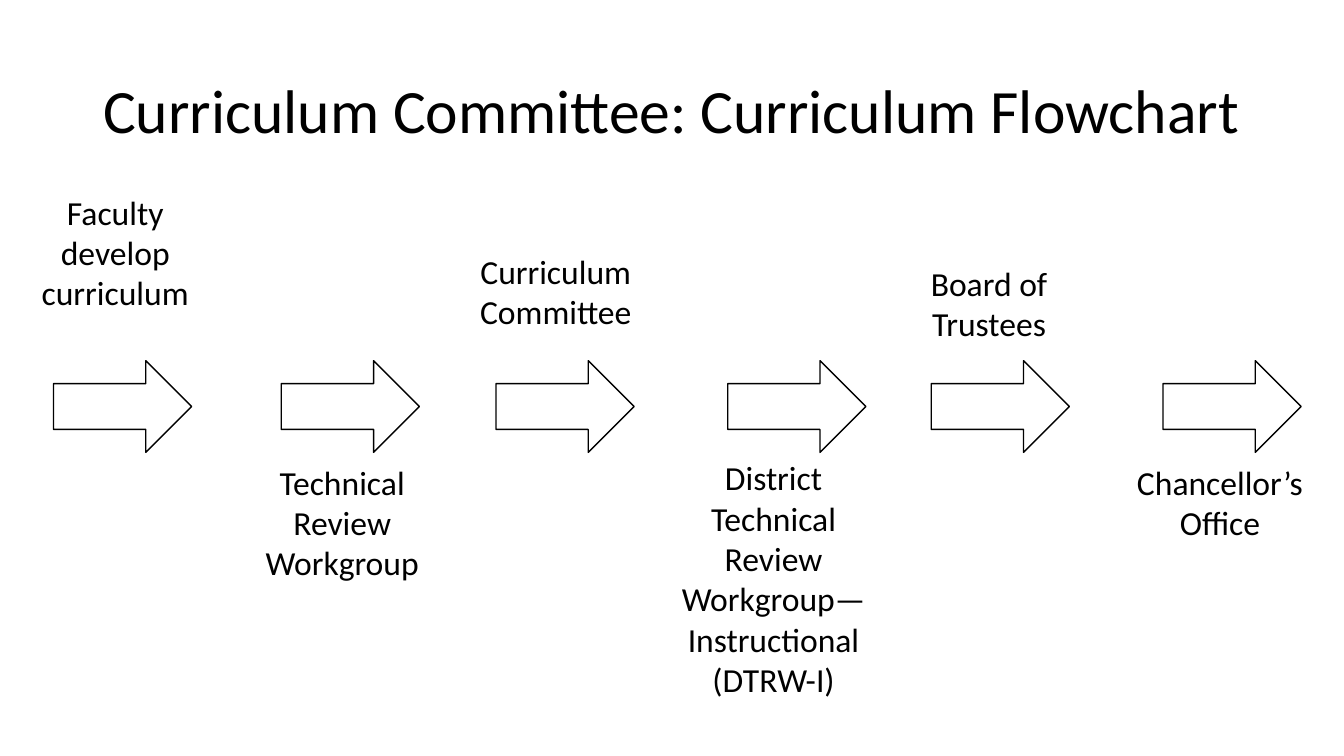
"""Build the curriculum approval flowchart slide."""
from dataclasses import dataclass

from pptx import Presentation
from pptx.dml.color import RGBColor
from pptx.enum.shapes import MSO_SHAPE as Shape
from pptx.enum.text import MSO_ANCHOR as Anchor, MSO_AUTO_SIZE as Fit, PP_ALIGN as Align
from pptx.slide import Slide
from pptx.text.text import TextFrame
from pptx.util import Cm, Pt

FONT = "Calibri"
BLACK = "000000"
WHITE = "FFFFFF"
ARROW_TOP, ARROW_WIDTH, ARROW_HEIGHT = 9.09, 3.48, 2.31
LABEL_WIDTH, LINE_HEIGHT, PADDING = 5.81, 1.02, 0.27


@dataclass(frozen=True)
class Step:
    label: str
    arrow: float
    left: float
    top: float
    lines: int


STEPS = [
    Step("Faculty develop curriculum", 1.35, 0, 4.7, 3),
    Step("Technical Review Workgroup", 7.09, 5.72, 11.51, 3),
    Step("Curriculum Committee", 12.5, 11.1, 6.2, 2),
    Step("District Technical Review Workgroup—Instructional (DTRW-I)", 18.34, 16.59, 11.4, 6),
    Step("Board of Trustees", 23.47, 22.02, 6.5, 2),
    Step("Chancellor’s Office", 29.31, 27.84, 11.51, 2),
]


def color(code: str) -> RGBColor:
    return RGBColor.from_string(code)


def write(frame: TextFrame, text: str, size: int, spacing: float = 1.0) -> None:
    frame.word_wrap = True
    frame.text = text
    line = frame.paragraphs[0]
    line.alignment = Align.CENTER
    line.line_spacing = spacing
    line.font.name = FONT
    line.font.size = Pt(size)
    line.font.color.rgb = color(BLACK)


def draw_title(slide: Slide) -> None:
    title = slide.shapes.title
    title.left, title.top, title.width, title.height = Cm(2.33), Cm(1.01), Cm(29.21), Cm(3.68)
    write(title.text_frame, "Curriculum Committee: Curriculum Flowchart", 44, 0.9)
    title.text_frame.auto_size = Fit.NONE
    title.text_frame.vertical_anchor = Anchor.MIDDLE


def draw_step(slide: Slide, step: Step) -> None:
    arrow = slide.shapes.add_shape(
        Shape.RIGHT_ARROW, Cm(step.arrow), Cm(ARROW_TOP), Cm(ARROW_WIDTH), Cm(ARROW_HEIGHT)
    )
    arrow.shadow.inherit = False
    arrow.fill.solid()
    arrow.fill.fore_color.rgb = color(WHITE)
    arrow.line.color.rgb = color(BLACK)
    arrow.line.width = Pt(1)

    height = step.lines * LINE_HEIGHT + PADDING
    label = slide.shapes.add_textbox(Cm(step.left), Cm(step.top), Cm(LABEL_WIDTH), Cm(height))
    write(label.text_frame, step.label, 24)
    label.text_frame.auto_size = Fit.SHAPE_TO_FIT_TEXT


def main() -> None:
    deck = Presentation()
    deck.slide_width, deck.slide_height = Cm(33.87), Cm(19.05)
    slide = deck.slides.add_slide(deck.slide_layouts.get_by_name("Title Only"))
    draw_title(slide)
    for step in STEPS:
        draw_step(slide, step)
    deck.save("out.pptx")


if __name__ == "__main__":
    main()
